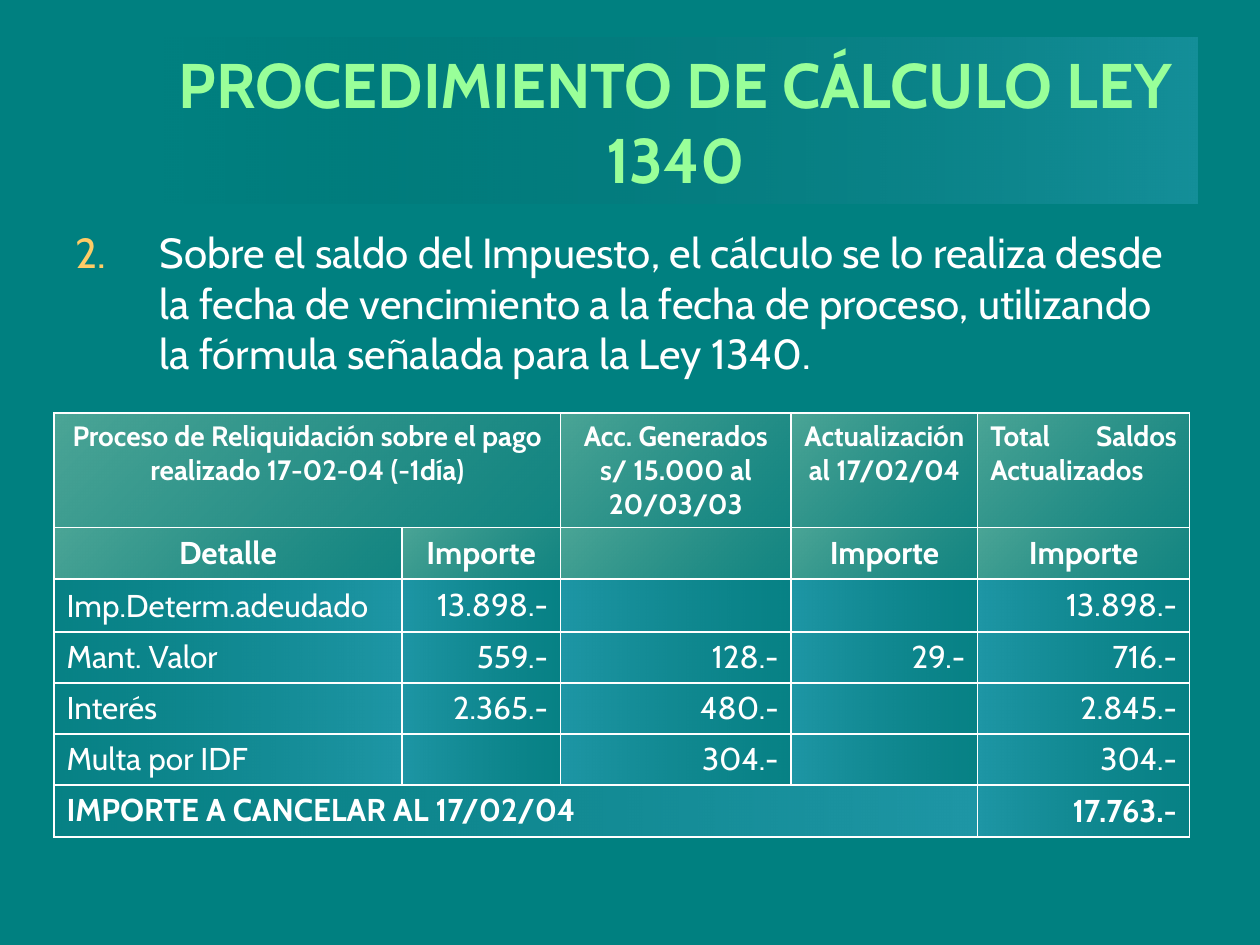
from dataclasses import dataclass
from typing import Any

from lxml.etree import SubElement
from pptx import Presentation
from pptx.dml.color import RGBColor
from pptx.enum.text import MSO_ANCHOR, MSO_AUTO_SIZE, PP_ALIGN
from pptx.oxml.ns import qn
from pptx.util import Cm, Pt

TEAL = RGBColor(0x00, 0x80, 0x80)
WHITE = RGBColor(0xFF, 0xFF, 0xFF)
BLACK = RGBColor(0x00, 0x00, 0x00)
LIGHT_GREEN = RGBColor(0x99, 0xFF, 0x99)
ORANGE = RGBColor(0xFF, 0xCC, 0x66)
CREAM = RGBColor(0xFF, 0xFF, 0xCC)
KHAKI = RGBColor(0xB6, 0xB6, 0x92)
SKY = RGBColor(0x66, 0xCC, 0xFF)
STEEL = RGBColor(0x49, 0x92, 0xB6)


@dataclass(frozen=True)
class Gradient:
    """Two-colour fill; each end has a colour and an opacity in percent."""
    start: tuple[RGBColor, int]
    end: tuple[RGBColor, int]
    angle: int = 0


@dataclass(frozen=True)
class CellStyle:
    gradient: Gradient
    align: PP_ALIGN
    anchor: MSO_ANCHOR = MSO_ANCHOR.TOP
    size: int = 18
    bold: bool = False


TITLE_FILL = Gradient((BLACK, 0), (SKY, 20))
HEADER_FILL = Gradient((CREAM, 30), (KHAKI, 10), 45)
LABEL_FILL = Gradient((STEEL, 10), (SKY, 30))
AMOUNT_FILL = Gradient((SKY, 30), (STEEL, 10))

# Table contents
COLUMN_WIDTHS = (7.01, 3.2, 4.65, 3.76, 4.27)
ROW_HEIGHTS = (2.3, 1.04, 1.07, 1.03, 1.03, 1.03, 1.04)
ROWS = (
    ("Proceso de Reliquidación sobre el pago realizado 17-02-04 (-1día)", "",
     "Acc. Generados s/ 15.000 al 20/03/03", "Actualización al 17/02/04",
     "Total Saldos Actualizados"),
    ("Detalle", "Importe", "", "Importe", "Importe"),
    ("Imp.Determ.adeudado", "13.898.-", "", "", "13.898.-"),
    ("Mant. Valor", "559.-", "128.-", "29.-", "716.-"),
    ("Interés", "2.365.-", "480.-", "", "2.845.-"),
    ("Multa por IDF", "", "304.-", "", "304.-"),
    ("IMPORTE A CANCELAR AL 17/02/04", "", "", "", "17.763.-"),
)
TOTAL_ROW = len(ROWS) - 1
LAST_COLUMN = len(COLUMN_WIDTHS) - 1


def apply(target: Any, values: dict[str, Any]) -> None:
    for name, value in values.items():
        setattr(target, name, value)


def write(paragraph: Any, text: str, size: int, color: RGBColor, bold: bool) -> None:
    run = paragraph.add_run()
    run.text = text
    apply(run.font, {"name": "Cabin", "size": Pt(size), "bold": bold})
    run.font.color.rgb = color


def add_color(parent: Any, color: RGBColor, opacity: int = 100) -> None:
    element = SubElement(parent, qn("a:srgbClr"), val=str(color))
    if opacity < 100:
        SubElement(element, qn("a:alpha"), val=str(opacity * 1000))


def add_gradient(properties: Any, gradient: Gradient) -> None:
    fill = SubElement(properties, qn("a:gradFill"), rotWithShape="1")
    stops = SubElement(fill, qn("a:gsLst"))
    for position, (color, opacity) in ((0, gradient.start), (100000, gradient.end)):
        add_color(SubElement(stops, qn("a:gs"), pos=str(position)), color, opacity)
    SubElement(fill, qn("a:lin"), ang=str(gradient.angle * 60000), scaled="0")


def add_borders(properties: Any) -> None:
    for side in ("a:lnL", "a:lnR", "a:lnT", "a:lnB"):
        line = SubElement(properties, qn(side), w=str(Pt(1)))
        add_color(SubElement(line, qn("a:solidFill")), WHITE)


def style_for(row: int, column: int) -> CellStyle:
    if row == 0:
        align = PP_ALIGN.JUSTIFY if column == LAST_COLUMN else PP_ALIGN.CENTER
        return CellStyle(HEADER_FILL, align, size=16, bold=True)
    if row == 1:
        return CellStyle(HEADER_FILL, PP_ALIGN.CENTER, bold=True)
    bold = row == TOTAL_ROW
    if column == 0:
        anchor = MSO_ANCHOR.BOTTOM if row == 2 else MSO_ANCHOR.TOP
        align = PP_ALIGN.LEFT if row in (2, TOTAL_ROW) else PP_ALIGN.JUSTIFY
        return CellStyle(LABEL_FILL, align, anchor, bold=bold)
    return CellStyle(AMOUNT_FILL, PP_ALIGN.RIGHT, MSO_ANCHOR.MIDDLE, bold=bold)


def add_title(slide: Any) -> None:
    title = slide.shapes.title
    apply(title, {"left": Cm(3.1), "top": Cm(0.76),
                  "width": Cm(21.03), "height": Cm(3.35)})
    add_gradient(title._element.spPr, TITLE_FILL)
    apply(title.text_frame, {"word_wrap": True, "auto_size": MSO_AUTO_SIZE.NONE,
                             "vertical_anchor": MSO_ANCHOR.MIDDLE})
    paragraph = title.text_frame.paragraphs[0]
    paragraph.alignment = PP_ALIGN.CENTER
    write(paragraph, "PROCEDIMIENTO DE CÁLCULO LEY 1340", 36, LIGHT_GREEN, True)


def add_numbered_text(slide: Any) -> None:
    box = slide.shapes.add_textbox(Cm(1.27), Cm(4.45), Cm(22.86), Cm(3.89))
    box.text_frame.word_wrap = True
    paragraph = box.text_frame.paragraphs[0]
    properties = paragraph._p.get_or_add_pPr()
    properties.set("marL", str(Cm(1.7)))
    properties.set("indent", str(-Cm(1.7)))
    add_color(SubElement(properties, qn("a:buClr")), ORANGE)
    SubElement(properties, qn("a:buFont"), typeface="Cabin")
    SubElement(properties, qn("a:buAutoNum"), type="arabicPeriod", startAt="2")
    write(paragraph, "Sobre el saldo del Impuesto, el cálculo se lo realiza desde la "
          "fecha de vencimiento a la fecha de proceso, utilizando la fórmula "
          "señalada para la Ley 1340.", 24, WHITE, False)


def add_settlement_table(slide: Any) -> None:
    frame = slide.shapes.add_table(
        len(ROWS), len(COLUMN_WIDTHS), Cm(1.09), Cm(8.33),
        Cm(sum(COLUMN_WIDTHS)), Cm(sum(ROW_HEIGHTS)))
    table = frame.table
    apply(table, {"first_row": False, "horz_banding": False})
    for column, width in zip(table.columns, COLUMN_WIDTHS):
        column.width = Cm(width)
    for row, height in zip(table.rows, ROW_HEIGHTS):
        row.height = Cm(height)

    for row_index, texts in enumerate(ROWS):
        for column_index, text in enumerate(texts):
            cell = table.cell(row_index, column_index)
            style = style_for(row_index, column_index)
            cell.vertical_anchor = style.anchor
            properties = cell._tc.get_or_add_tcPr()
            add_borders(properties)
            add_gradient(properties, style.gradient)
            if text:
                paragraph = cell.text_frame.paragraphs[0]
                paragraph.alignment = style.align
                write(paragraph, text, style.size, WHITE, style.bold)

    # Wide header and total label
    table.cell(0, 0).merge(table.cell(0, 1))
    table.cell(TOTAL_ROW, 0).merge(table.cell(TOTAL_ROW, LAST_COLUMN - 1))


def main() -> None:
    presentation = Presentation()
    apply(presentation, {"slide_width": Cm(25.4), "slide_height": Cm(19.05)})
    slide = presentation.slides.add_slide(presentation.slide_layouts[5])
    slide.background.fill.solid()
    slide.background.fill.fore_color.rgb = TEAL
    add_title(slide)
    add_numbered_text(slide)
    add_settlement_table(slide)
    presentation.save("out.pptx")


if __name__ == "__main__":
    main()
